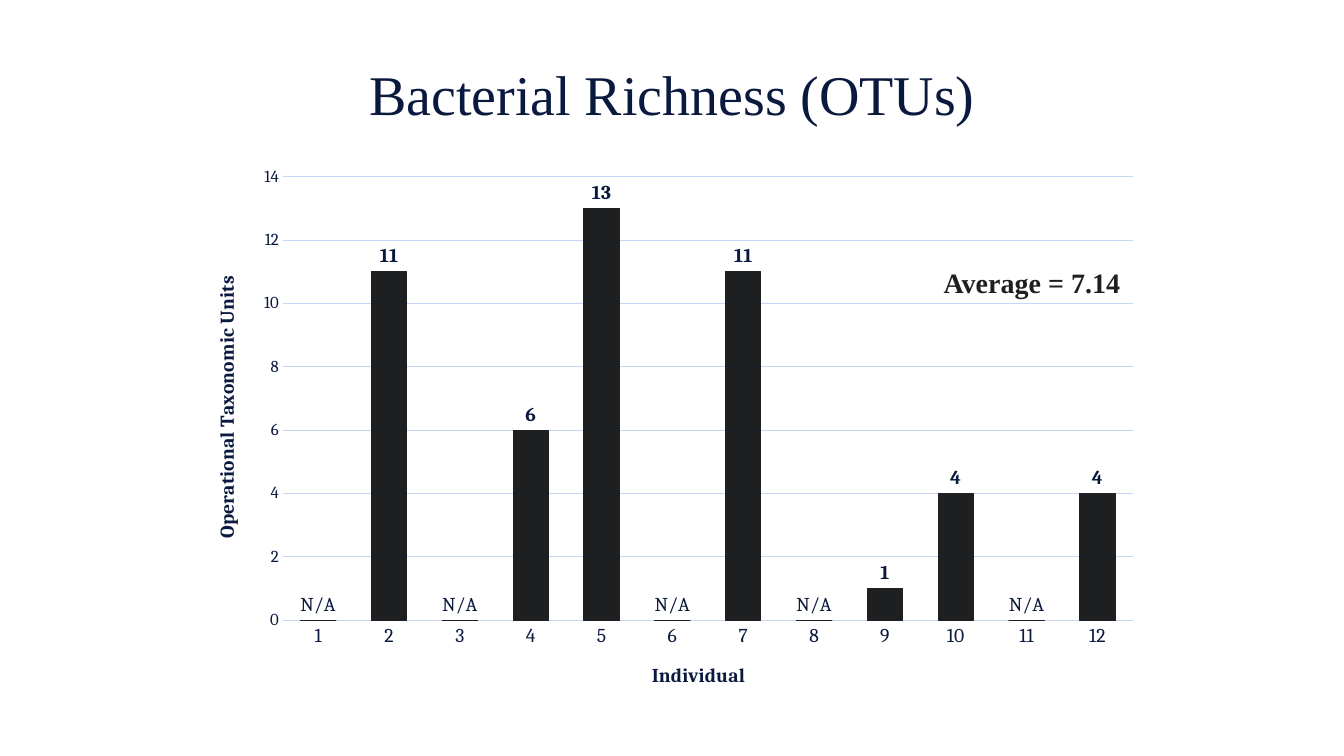
from lxml.etree import SubElement
from pptx import Presentation
from pptx.chart.data import CategoryChartData
from pptx.dml.color import RGBColor
from pptx.enum.chart import XL_CHART_TYPE, XL_LABEL_POSITION, XL_TICK_MARK
from pptx.enum.text import MSO_ANCHOR, PP_ALIGN
from pptx.oxml.ns import qn
from pptx.util import Cm, Pt

COLORS = {"navy": "0A193E", "bar": "1E1F21", "grid": "C6D4F6"}
SERIF, CHART_FONT = "Times New Roman", "Cambria"
RICHNESS = [0, 11, 0, 6, 13, 0, 11, 0, 1, 4, 0, 4]
PLOT_AREA = {"x": 0.095, "y": 0.037, "w": 0.886, "h": 0.8}


def rgb(name):
    return RGBColor.from_string(COLORS[name])


def style_font(font, color, **values):
    for key, value in values.items():
        setattr(font, key, value)
    font.color.rgb = rgb(color)


def style_line(line, color):
    line.color.rgb = rgb(color)
    line.width = Pt(0.75)


def add_text(slide, box, text, color, **values):
    tf = slide.shapes.add_textbox(*box).text_frame
    tf.word_wrap = True
    tf.vertical_anchor = MSO_ANCHOR.MIDDLE
    p = tf.paragraphs[0]
    p.alignment = PP_ALIGN.CENTER
    r = p.add_run()
    r.text = text
    style_font(r.font, color, name=SERIF, **values)


def style_axis(axis, title, size):
    axis.major_tick_mark = axis.minor_tick_mark = XL_TICK_MARK.NONE
    style_font(axis.tick_labels.font, "navy", name=CHART_FONT, size=Pt(size))
    p = axis.axis_title.text_frame.paragraphs[0]
    r = p.add_run()
    r.text = title
    style_font(r.font, "navy", name=CHART_FONT, size=Pt(14), bold=True)


def fix_plot_area(chart):
    plot_area = chart.plots[0]._element.getparent()
    layout = plot_area.find(qn("c:layout"))
    if layout is None:
        layout = SubElement(plot_area, qn("c:layout"))
        plot_area.insert(0, layout)
    manual = SubElement(layout, qn("c:manualLayout"))
    settings = {"layoutTarget": "inner", "xMode": "edge", "yMode": "edge", **PLOT_AREA}
    for tag, value in settings.items():
        SubElement(manual, qn(f"c:{tag}")).set("val", str(value))


def add_richness_chart(slide, box):
    data = CategoryChartData()
    data.categories = [str(n + 1) for n in range(len(RICHNESS))]
    data.add_series("Series 1", RICHNESS)
    chart = slide.shapes.add_chart(XL_CHART_TYPE.COLUMN_CLUSTERED, *box, data).chart
    chart.has_legend = chart.has_title = False
    style_font(chart.font, "navy", name=CHART_FONT, size=Pt(10))
    fix_plot_area(chart)

    # Axes
    style_axis(chart.category_axis, "Individual", 14)
    style_line(chart.category_axis.format.line, "grid")
    axis = chart.value_axis
    style_axis(axis, "Operational Taxonomic Units", 12)
    axis.minimum_scale, axis.maximum_scale, axis.major_unit = 0, 14, 2
    axis.format.line.fill.background()
    style_line(axis.major_gridlines.format.line, "grid")

    # Columns
    plot = chart.plots[0]
    plot.gap_width, plot.overlap, plot.vary_by_categories = 100, -24, False
    series = plot.series[0]
    series.format.fill.solid()
    series.format.fill.fore_color.rgb = rgb("bar")
    style_line(series.format.line, "bar")

    # Value labels, with N/A where nothing was measured
    labels = series.data_labels
    labels.show_value = True
    labels.position = XL_LABEL_POSITION.OUTSIDE_END
    style_font(labels.font, "navy", name=CHART_FONT, size=Pt(14), bold=True)
    for i, value in enumerate(RICHNESS):
        if value == 0:
            label = series.points[i].data_label
            r = label.text_frame.paragraphs[0].add_run()
            r.text = "N/A"
            style_font(r.font, "navy", name=CHART_FONT, size=Pt(14), bold=False)
            label.position = XL_LABEL_POSITION.OUTSIDE_END


def build_chart_slide(prs):
    slide = prs.slides.add_slide(prs.slide_layouts[6])
    # Title
    add_text(slide, (Cm(1.7), Cm(0.76), Cm(30.48), Cm(3.18)),
             "Bacterial Richness (OTUs)", "navy", size=Pt(40))
    # Chart
    add_richness_chart(slide, (Cm(4.83), Cm(3.94), Cm(24.18), Cm(13.97)))
    # Average
    add_text(slide, (Cm(22.45), Cm(6.55), Cm(7.11), Cm(1.12)),
             "Average = 7.14", "bar", size=Pt(20), bold=True)


def main():
    prs = Presentation()
    prs.slide_width, prs.slide_height = Cm(33.87), Cm(19.05)
    build_chart_slide(prs)
    prs.save("out.pptx")


if __name__ == "__main__":
    main()
